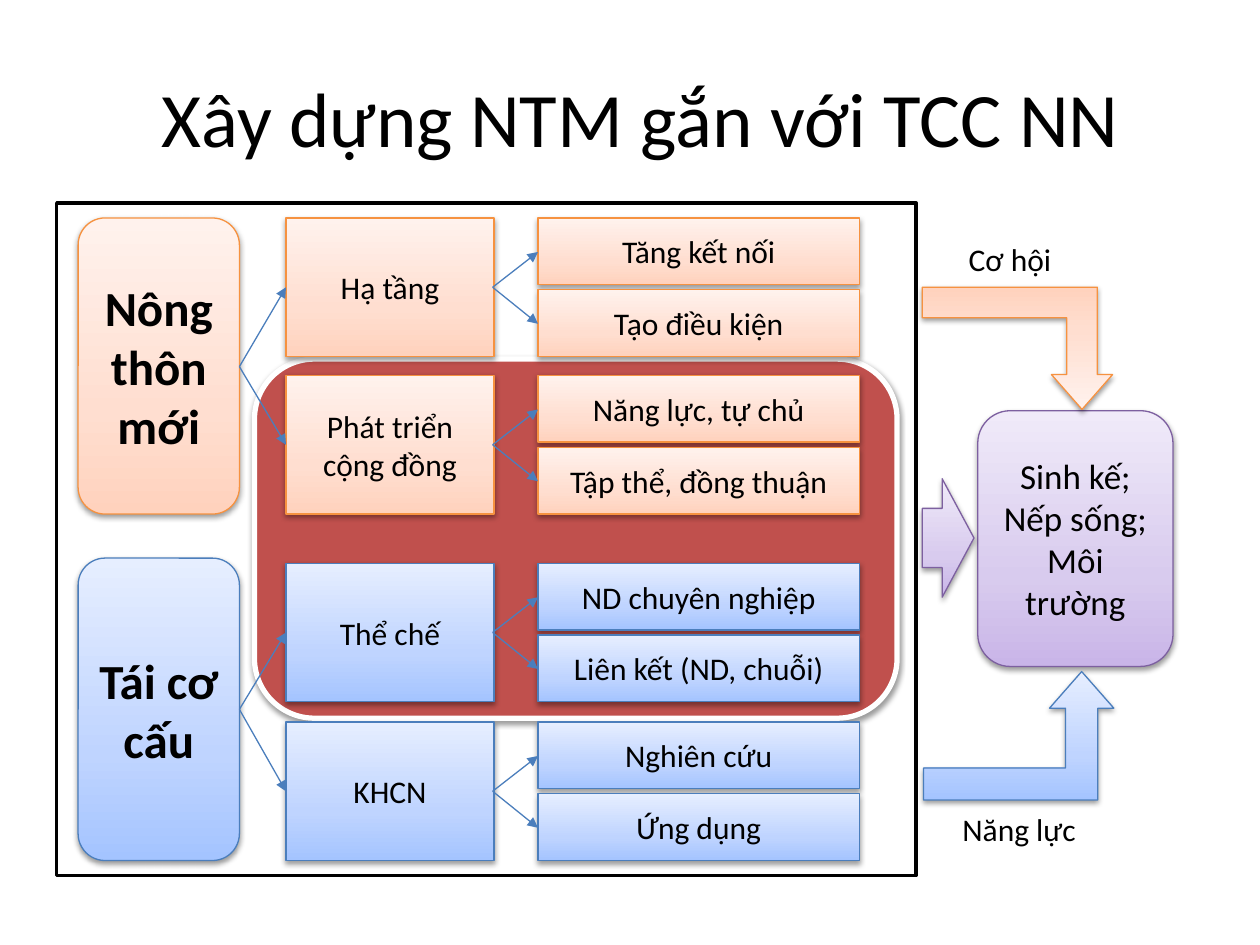
from pptx import Presentation
from pptx.util import Inches, Pt
from pptx.dml.color import RGBColor as RGB
from pptx.enum.shapes import MSO_SHAPE as Geo, MSO_CONNECTOR as Conn
from pptx.enum.text import PP_ALIGN as Align, MSO_ANCHOR as Anchor
from pptx.oxml import parse_xml
from pptx.oxml.ns import qn, nsdecls
from copy import deepcopy

COLORS = {"black": "000000", "white": "FFFFFF", "red": "C0504D"}
# Each tone: line colour, then gradient stops from bottom to top
TONES = {
    "orange": ("F69240", "FFD2BD", "FFDED0", "FFF2ED"),
    "blue": ("4B7EBC", "A4C4FF", "BFD4FF", "E6EEFF"),
    "purple": ("7D60A0", "C9B5E8", "D8CBEE", "F0EAF9"),
}
SHADOW = (
    f'<a:outerShdw {nsdecls("a")} blurRad="40000" dist="20000" dir="5400000" '
    'rotWithShape="0"><a:srgbClr val="000000"><a:alpha val="38000"/>'
    '</a:srgbClr></a:outerShdw>'
)

prs = Presentation()
prs.slide_width, prs.slide_height = Inches(10), Inches(7.5)
slide = prs.slides.add_slide(prs.slide_layouts[6])
shapes = slide.shapes


def write(shape, text, size=18, bold=False, align=Align.CENTER, anchor=Anchor.MIDDLE):
    frame = shape.text_frame
    frame.text = text
    for key, value in {"word_wrap": True, "vertical_anchor": anchor}.items():
        setattr(frame, key, value)
    look = {"name": "Calibri", "size": Pt(size), "bold": bold}
    for para in frame.paragraphs:
        para.alignment = align
        for key, value in look.items():
            setattr(para.runs[0].font, key, value)
        para.runs[0].font.color.rgb = RGB.from_string(COLORS["black"])


def draw(geo, box, tone=None, fill="white", line="black", width=0.75, shadow=True):
    """Add a shape, with a tone's gradient or else a plain fill."""
    shape = shapes.add_shape(geo, *map(Inches, box))
    edge = COLORS[line]
    if tone:
        edge, *stops = TONES[tone]
        shape.fill.gradient()
        shape.fill.gradient_angle = 90
        first = shape._element.spPr.find(".//" + qn("a:gs"))
        first.addnext(deepcopy(first))
        for stop, spot, color in zip(shape.fill.gradient_stops, (0, 0.35, 1), stops):
            stop.position = spot
            stop.color.rgb = RGB.from_string(color)
    else:
        shape.fill.solid()
        shape.fill.fore_color.rgb = RGB.from_string(COLORS[fill])
    shape.line.color.rgb = RGB.from_string(edge)
    shape.line.width = Pt(width)
    shape.shadow.inherit = False
    if shadow:
        shape._element.spPr.find(qn("a:effectLst")).append(parse_xml(SHADOW))
    return shape


# Frame and the shared core
draw(Geo.RECTANGLE, (0.45, 1.61, 6.82, 5.34), width=2, shadow=False)
draw(Geo.ROUNDED_RECTANGLE, (2.02, 2.85, 5.1, 2.85), fill="red", line="white", width=3)

# Tree: two themes, each with two branches of two leaves
themes = [
    ("Nông thôn mới", "orange", 1.73, 2.35, 2.91, [
        (1.73, "Hạ tầng", ["Tăng kết nối", "Tạo điều kiện"]),
        (2.98, "Phát triển cộng đồng", ["Năng lực, tự chủ", "Tập thể, đồng thuận"]),
    ]),
    ("Tái cơ cấu", "blue", 4.43, 2.4, 5.63, [
        (4.47, "Thể chế", ["ND chuyên nghiệp", "Liên kết (ND, chuỗi)"]),
        (5.73, "KHCN", ["Nghiên cứu", "Ứng dụng"]),
    ]),
]
links = []
for theme, tone, top, height, root, branches in themes:
    write(draw(Geo.ROUNDED_RECTANGLE, (0.62, top, 1.28, height), tone), theme, 28, True)
    for y, branch, leaves in branches:
        mid = y + 0.55
        write(draw(Geo.RECTANGLE, (2.27, y, 1.65, 1.1), tone), branch)
        links.append((1.9, root, 2.27, mid))
        for i, leaf in enumerate(leaves):
            spot = y + 0.57 * i
            write(draw(Geo.RECTANGLE, (4.27, spot, 2.55, 0.53), tone), leaf)
            links.append((3.91, mid, 4.27, spot + 0.27))

for ends in links:
    link = shapes.add_connector(Conn.STRAIGHT, *map(Inches, ends))
    link.line.color.rgb = RGB.from_string(TONES["blue"][0])
    link.line.width = Pt(0.75)
    link.line._get_or_add_ln().append(
        parse_xml(f'<a:tailEnd {nsdecls("a")} type="triangle"/>'))
    link._element.spPr.append(parse_xml(f'<a:effectLst {nsdecls("a")}/>'))

# Outcome and the arrows into it
goal = draw(Geo.ROUNDED_RECTANGLE, (7.76, 3.26, 1.55, 2.03), "purple")
write(goal, "Sinh kế;\nNếp sống;\nMôi trường", 20)
arrows = [
    (Geo.RIGHT_ARROW, (7.32, 3.8, 0.41, 0.94), "purple", (0.5, 0.615), False),
    (Geo.BENT_UP_ARROW, (7.33, 5.33, 1.51, 1.02), "blue", (0.25, 0.25, 0.285), False),
    (Geo.BENT_UP_ARROW, (7.32, 2.28, 1.51, 0.97), "orange", (0.25, 0.25, 0.285), True),
]
for geo, box, tone, adjust, flip in arrows:
    arrow = draw(geo, box, tone)
    for i, value in enumerate(adjust):
        arrow.adjustments[i] = value
    if flip:
        arrow._element.spPr.find(qn("a:xfrm")).set("flipV", "1")

# Labels and title
for text, x, y in [("Cơ hội", 7.59, 1.86), ("Năng lực", 7.54, 6.38)]:
    label = shapes.add_textbox(*map(Inches, (x, y, 1.36, 0.4)))
    write(label, text, align=Align.LEFT, anchor=Anchor.TOP)
title = shapes.add_textbox(*map(Inches, (0.5, 0.3, 9.17, 1.25)))
write(title, "Xây dựng NTM gắn với TCC NN", 44)

prs.save("out.pptx")
